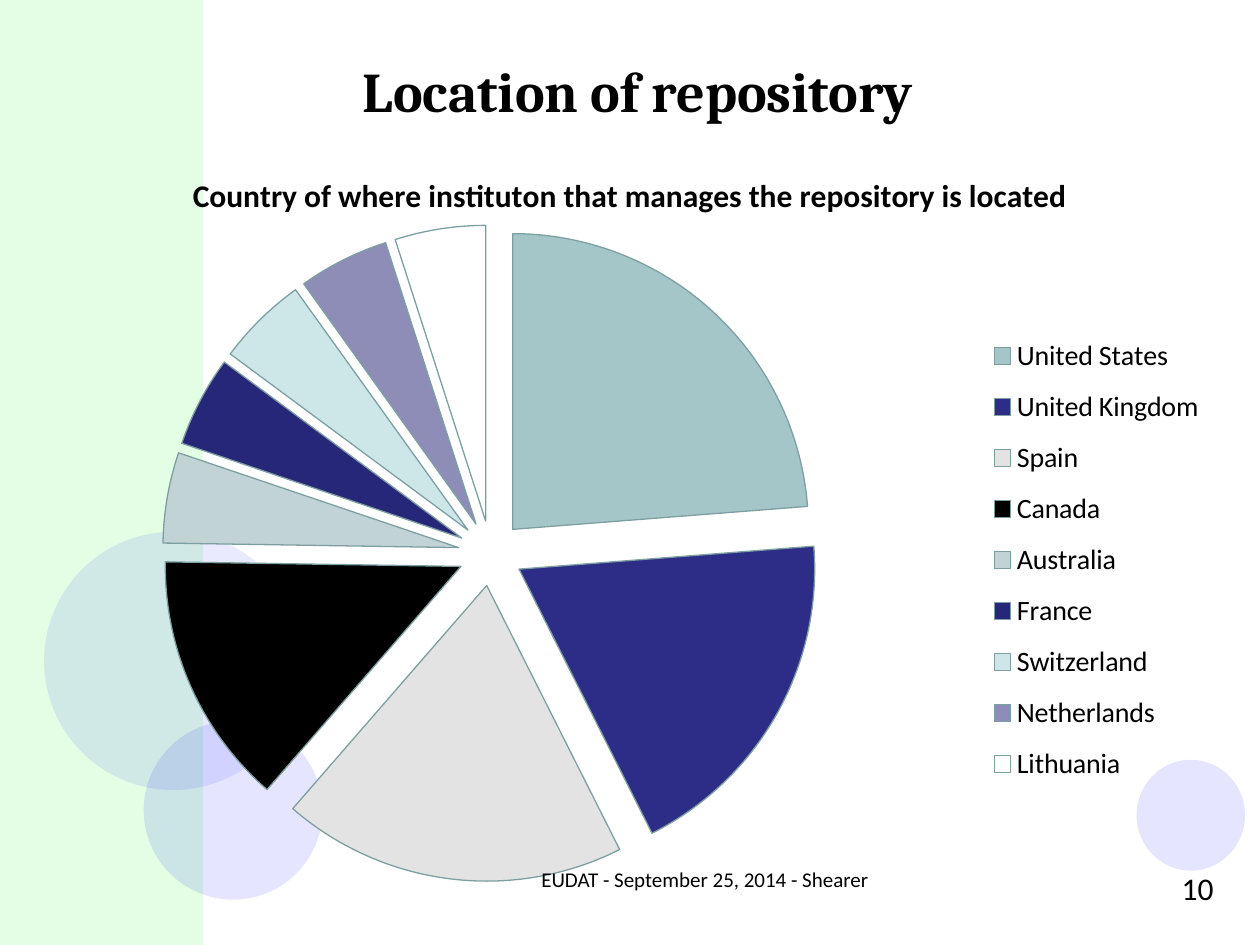
import pptx
import pptx.chart.data
import pptx.dml.color
import pptx.enum.chart
import pptx.enum.shapes
import pptx.enum.text
import pptx.oxml
import pptx.oxml.ns
import pptx.util

Pt = pptx.util.Pt
ALIGN = pptx.enum.text.PP_ALIGN
ANCHOR = pptx.enum.text.MSO_ANCHOR
SHAPE = pptx.enum.shapes.MSO_SHAPE

THEME = {
    "text": "000000", "outline": "7E9FA1",
    "heading_font": "Cambria", "body_font": "Calibri",
    "heading": 32, "chart_title": 18, "legend": 16, "footer": 12, "number": 18,
    "band": "CEFECF", "large_bubble": "3333FF", "bubble": "0000FF",
}

# preset, theme colour, opacity in percent, (left, top, width, height)
DECORATIONS = [
    (SHAPE.RECTANGLE, "band", 56, (0, 0, 116, 540)),
    (SHAPE.OVAL, "large_bubble", 10, (25.2, 303.84, 147.6, 147.6)),
    (SHAPE.OVAL, "bubble", 10, (82.08, 411.84, 102.24, 102.24)),
    (SHAPE.OVAL, "bubble", 10, (649.44, 434.16, 62, 63.36)),
]

# text, font, size, bold, alignment, anchor, box
HEADING = ("Location of repository", "heading_font", "heading", True,
           ALIGN.CENTER, ANCHOR.MIDDLE, (81.36, 6.48, 566.64, 90))
FOOTERS = [
    ("EUDAT - September 25, 2014 - Shearer", "body_font", "footer", False,
     ALIGN.CENTER, ANCHOR.TOP, (201.6, 491.76, 402.48, 37.44)),
    ("10", "body_font", "number", False,
     ALIGN.RIGHT, ANCHOR.TOP, (655.2, 493.2, 45.36, 37.44)),
]

CHART_TITLE = "Country of where instituton that manages the repository is located"
CHART_BOX = (0, 82.8, 720, 453.6)
PLOT_LAYOUT = (0.129, 0.101, 0.521, 0.827)
LEGEND_LAYOUT = (0.775, 0.223, 0.19, 0.6)
EXPLOSION = 11
COUNTRIES = [
    ("United States", 24, "A5C6C9"),
    ("United Kingdom", 19, "2D2D87"),
    ("Spain", 19, "E3E3E3"),
    ("Canada", 14, "000000"),
    ("Australia", 5, "C1D3D4"),
    ("France", 5, "272779"),
    ("Switzerland", 5, "CDE7E9"),
    ("Netherlands", 5, "8D8DB7"),
    ("Lithuania", 5, "FFFFFF"),
]


def rgb(value):
    return pptx.dml.color.RGBColor.from_string(value)


def points(box):
    return [Pt(length) for length in box]


def chart_element(markup):
    """Parse one element whose tags are in the chart namespace, prefix c."""
    namespace = pptx.oxml.ns.nsdecls("c")
    return pptx.oxml.parse_xml(markup.replace(">", f" {namespace}>", 1))


def style_font(font, family, size, bold=False):
    font.name = THEME[family]
    font.size = Pt(THEME[size])
    font.bold = bold
    font.color.rgb = rgb(THEME["text"])


def add_decoration(slide, preset, colour, opacity, box):
    shape = slide.shapes.add_shape(preset, *points(box))
    shape.shadow.inherit = False
    shape.line.fill.background()
    shape.fill.solid()
    shape.fill.fore_color.rgb = rgb(THEME[colour])
    colour_element = shape._element.spPr.find(".//" + pptx.oxml.ns.qn("a:srgbClr"))
    alpha = colour_element.makeelement(pptx.oxml.ns.qn("a:alpha"), {"val": str(opacity * 1000)})
    colour_element.append(alpha)


def add_text(slide, text, family, size, bold, alignment, anchor, box):
    frame = slide.shapes.add_textbox(*points(box)).text_frame
    frame.word_wrap = True
    frame.vertical_anchor = anchor
    paragraph = frame.paragraphs[0]
    paragraph.alignment = alignment
    run = paragraph.add_run()
    run.text = text
    style_font(run.font, family, size, bold)


def set_layout(element, layout, target=""):
    """Place a plot area or a legend by fractions of the chart."""
    for old in element.findall(pptx.oxml.ns.qn("c:layout")):
        element.remove(old)
    parts = '<c:xMode val="edge"/><c:yMode val="edge"/>'
    parts += "".join(f'<c:{key} val="{value}"/>' for key, value in zip("xywh", layout))
    node = chart_element(f"<c:layout><c:manualLayout>{target}{parts}</c:manualLayout></c:layout>")
    position = element.find(pptx.oxml.ns.qn("c:legendPos"))
    if position is None:
        element.insert(0, node)
    else:
        position.addnext(node)


def add_country_chart(slide):
    data = pptx.chart.data.CategoryChartData()
    data.categories = [name for name, _, _ in COUNTRIES]
    data.add_series("Series 1", [value for _, value, _ in COUNTRIES])
    chart = slide.shapes.add_chart(
        pptx.enum.chart.XL_CHART_TYPE.PIE, *points(CHART_BOX), data).chart
    style_font(chart.font, "body_font", "legend")

    chart.has_title = True
    run = chart.chart_title.text_frame.paragraphs[0].add_run()
    run.text = CHART_TITLE
    style_font(run.font, "body_font", "chart_title", True)

    chart.has_legend = True
    chart.legend.position = pptx.enum.chart.XL_LEGEND_POSITION.RIGHT
    chart.legend.include_in_layout = False
    style_font(chart.legend.font, "body_font", "legend")
    set_layout(chart.legend._element, LEGEND_LAYOUT)
    set_layout(chart._chartSpace.chart.plotArea, PLOT_LAYOUT, '<c:layoutTarget val="inner"/>')

    plot = chart.plots[0]
    plot.vary_by_categories = True
    series = plot.series[0]
    series.format.line.width = Pt(0.75)
    explosion = series._element.makeelement(
        pptx.oxml.ns.qn("c:explosion"), {"val": str(EXPLOSION)})
    series._element.spPr.addnext(explosion)
    for index, (_, _, colour) in enumerate(COUNTRIES):
        style = series.points[index].format
        style.fill.solid()
        style.fill.fore_color.rgb = rgb(colour)
        style.line.color.rgb = rgb(THEME["outline"])
        style.line.width = Pt(0.75)


def main():
    presentation = pptx.Presentation()
    presentation.slide_width, presentation.slide_height = Pt(720), Pt(540)
    slide = presentation.slides.add_slide(presentation.slide_layouts[6])
    for decoration in DECORATIONS:
        add_decoration(slide, *decoration)
    add_text(slide, *HEADING)
    add_country_chart(slide)
    for footer in FOOTERS:
        add_text(slide, *footer)
    presentation.save("out.pptx")


if __name__ == "__main__":
    main()
